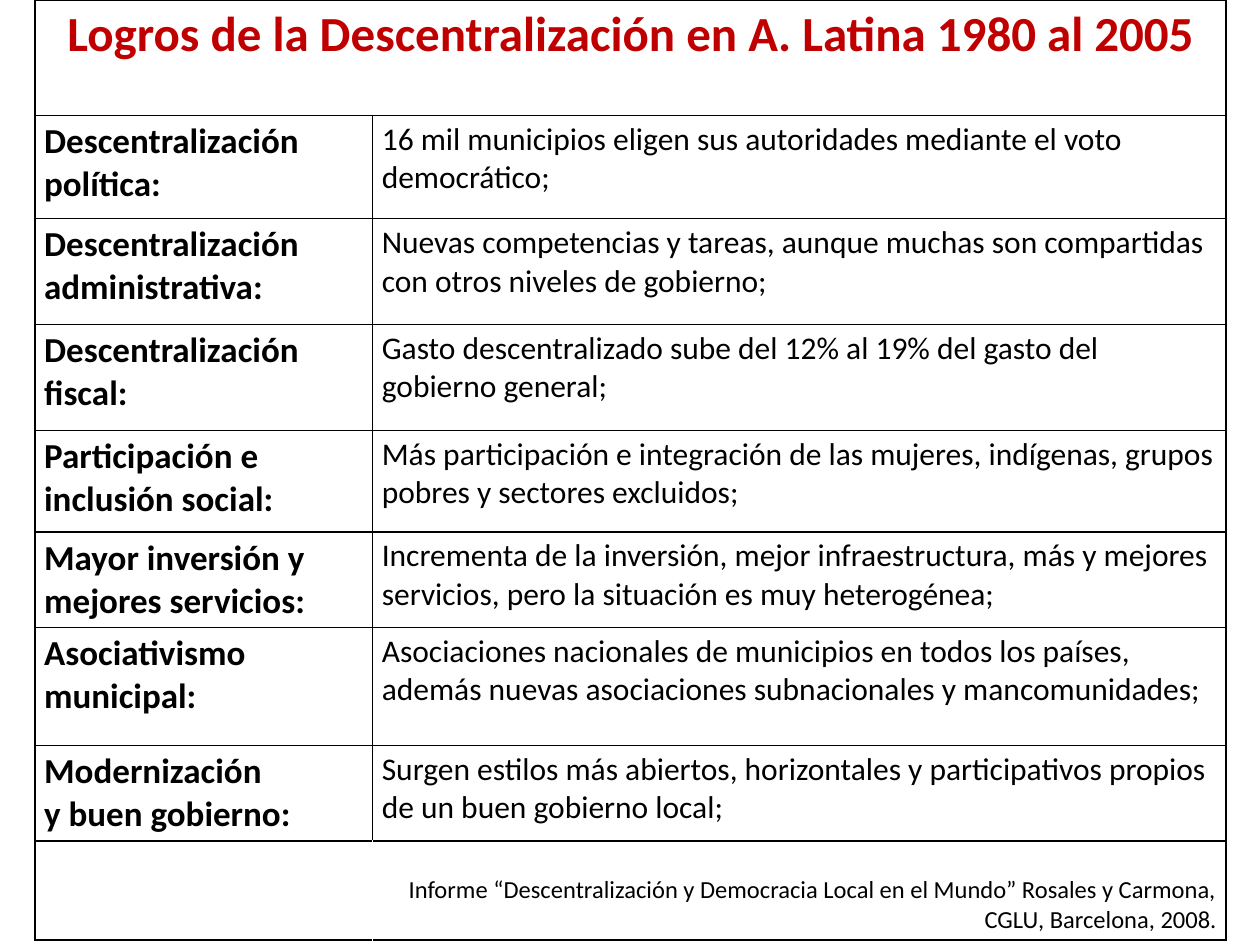
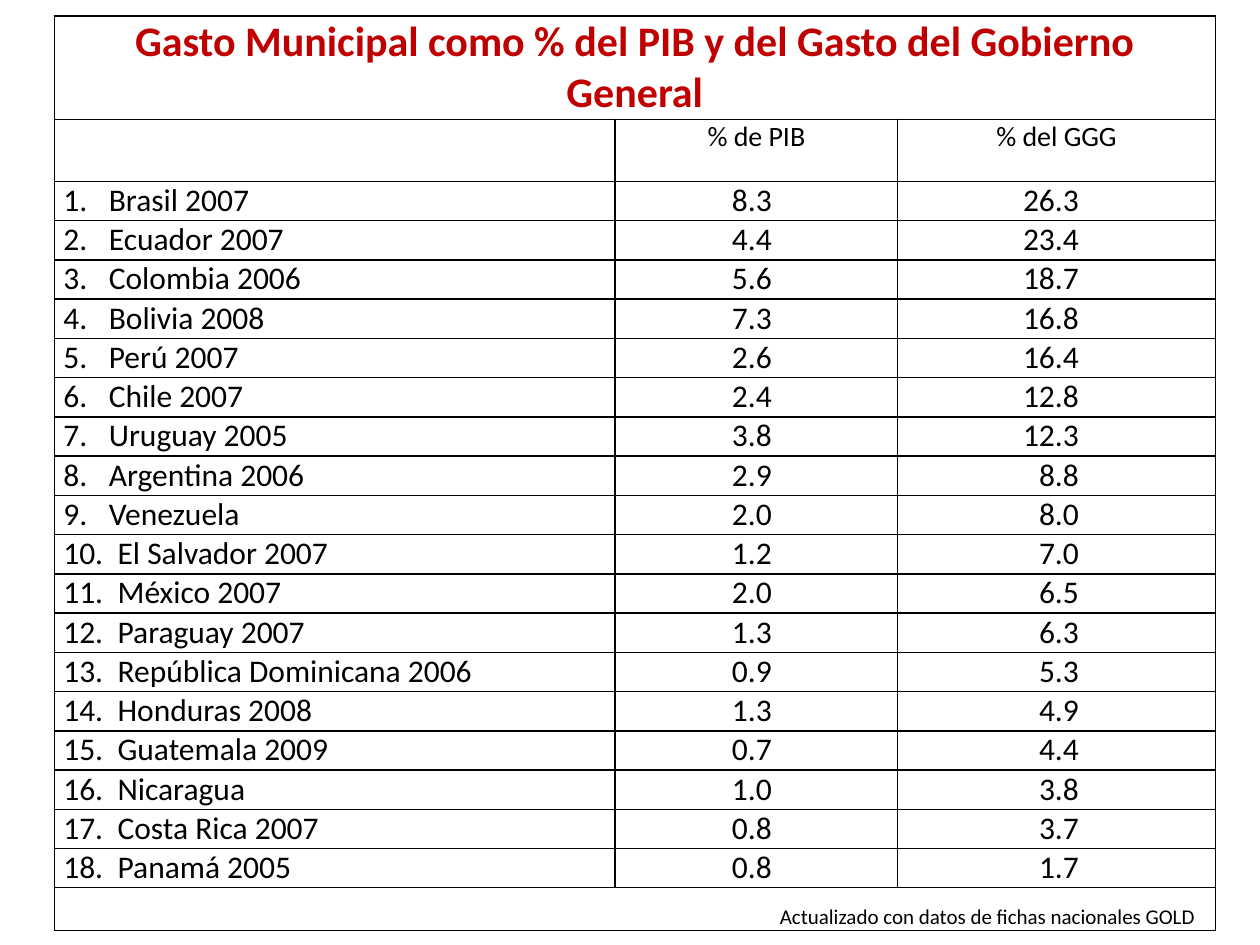
from dataclasses import dataclass

from lxml.etree import SubElement
from pptx import Presentation
from pptx.dml.color import RGBColor
from pptx.enum.text import MSO_ANCHOR, PP_ALIGN
from pptx.oxml.ns import qn
from pptx.util import Pt


@dataclass(frozen=True)
class Theme:
    font: str = "Calibri"
    title_color: str = "C00000"
    text_color: str = "000000"
    border_color: str = "000000"
    border_width: float = 1
    side_margin: float = 5.2
    achievements_title: float = 28
    spending_title: float = 24
    label: float = 20
    body: float = 18
    header: float = 16
    source: float = 14
    note: float = 12


THEME = Theme()
BLANK_LAYOUT = 6

ACHIEVEMENTS = [
    ("Descentralización política:",
     "16 mil municipios eligen sus autoridades mediante el voto democrático;"),
    ("Descentralización administrativa:",
     "Nuevas competencias y tareas, aunque muchas son compartidas con otros niveles de gobierno;"),
    ("Descentralización fiscal:",
     "Gasto descentralizado sube del 12% al 19% del gasto del gobierno general;"),
    ("Participación e inclusión social:",
     "Más participación e integración de las mujeres, indígenas, grupos pobres y sectores excluidos;"),
    ("Mayor inversión y mejores servicios:",
     "Incrementa de la inversión, mejor infraestructura, más y mejores servicios, "
     "pero la situación es muy heterogénea;"),
    ("Asociativismo municipal:",
     "Asociaciones nacionales de municipios en todos los países, además nuevas "
     "asociaciones subnacionales y mancomunidades;"),
    ("Modernización\ny buen gobierno:",
     "Surgen estilos más abiertos, horizontales y participativos propios de un buen gobierno local;"),
]

SPENDING = [
    ("Brasil 2007", "8.3", "26.3"),
    ("Ecuador 2007", "4.4", "23.4"),
    ("Colombia 2006", "5.6", "18.7"),
    ("Bolivia 2008", "7.3", "16.8"),
    ("Perú 2007", "2.6", "16.4"),
    ("Chile 2007", "2.4", "12.8"),
    ("Uruguay 2005", "3.8", "12.3"),
    ("Argentina 2006", "2.9", "8.8"),
    ("Venezuela", "2.0", "8.0"),
    ("El Salvador 2007", "1.2", "7.0"),
    ("México 2007", "2.0", "6.5"),
    ("Paraguay 2007", "1.3", "6.3"),
    ("República Dominicana 2006", "0.9", "5.3"),
    ("Honduras 2008", "1.3", "4.9"),
    ("Guatemala 2009", "0.7", "4.4"),
    ("Nicaragua", "1.0", "3.8"),
    ("Costa Rica 2007", "0.8", "3.7"),
    ("Panamá 2005", "0.8", "1.7"),
]


def write(cell, text, size=THEME.body, bold=False, color=THEME.text_color,
          align=PP_ALIGN.LEFT, anchor=MSO_ANCHOR.TOP, right_margin=None):
    cell.text = text
    cell.vertical_anchor = anchor
    if right_margin is not None:
        cell.margin_right = Pt(right_margin)
    for paragraph in cell.text_frame.paragraphs:
        paragraph.alignment = align
        font = paragraph.font
        font.name, font.size, font.bold = THEME.font, Pt(size), bold
        font.color.rgb = RGBColor.from_string(color)
        for run in paragraph.runs:
            run.font.name, run.font.size, run.font.bold = THEME.font, Pt(size), bold
            run.font.color.rgb = RGBColor.from_string(color)


def write_title(table, text, size):
    table.cell(0, 0).merge(table.cell(0, len(table.columns) - 1))
    write(table.cell(0, 0), text, size=size, bold=True,
          color=THEME.title_color, align=PP_ALIGN.CENTER)


def number_paragraph(paragraph, number):
    """Give the paragraph an automatic number with a hanging indent."""
    indent = Pt(26 if number < 10 else 31)
    properties = paragraph._p.get_or_add_pPr()
    properties.set("marL", str(indent))
    properties.set("indent", str(-indent))
    bullet = SubElement(properties, qn("a:buAutoNum"), type="arabicPeriod", startAt=str(number))
    properties.insert(0, bullet)


def set_borders(cell, edges):
    properties = cell._tc.get_or_add_tcPr()
    for edge in edges:
        line = SubElement(properties, qn(f"a:ln{edge}"), w=str(Pt(THEME.border_width)))
        fill = SubElement(line, qn("a:solidFill"))
        SubElement(fill, qn("a:srgbClr"), val=THEME.border_color)


def add_ruled_table(slide, left, top, widths, heights, vertical_margin, open_row=None):
    """Add an unfilled table; open_row has no line between its two cells."""
    frame = slide.shapes.add_table(len(heights), len(widths), Pt(left), Pt(top),
                                   Pt(sum(widths)), Pt(sum(heights)))
    table = frame.table
    table.first_row = table.horz_banding = False
    for column, width in zip(table.columns, widths):
        column.width = Pt(width)
    for row_index, (row, height) in enumerate(zip(table.rows, heights)):
        row.height = Pt(height)
        for column_index, cell in enumerate(row.cells):
            edges = "LRTB"
            if row_index == open_row:
                edges = "LTB" if column_index == 0 else "RTB"
            set_borders(cell, edges)
            cell.fill.background()
            cell.margin_left = cell.margin_right = Pt(THEME.side_margin)
            cell.margin_top = cell.margin_bottom = Pt(vertical_margin)
    return table


def build_achievements(slide, left, top):
    heights = [66, 59, 60.5, 60.5, 58, 54.5, 67.5, 54.5, 56.5]
    source_row = len(heights) - 1
    table = add_ruled_table(slide, left, top, [193, 487.5], heights,
                            vertical_margin=2.8, open_row=source_row)
    write_title(table, "Logros de la Descentralización en A. Latina 1980 al 2005",
                THEME.achievements_title)
    for row, (label, achievement) in enumerate(ACHIEVEMENTS, start=1):
        write(table.cell(row, 0), label, size=THEME.label, bold=True)
        write(table.cell(row, 1), achievement)
    write(table.cell(source_row, 1),
          "Informe “Descentralización y Democracia Local en el Mundo” "
          "Rosales y Carmona, CGLU, Barcelona, 2008.",
          size=THEME.source, align=PP_ALIGN.RIGHT, anchor=MSO_ANCHOR.BOTTOM)


def build_spending(slide, left, top):
    heights = [59, 35.5] + [22.45] * len(SPENDING) + [24.5]
    note_row = len(heights) - 1
    table = add_ruled_table(slide, left, top, [320.5, 161.5, 181.5], heights, vertical_margin=0)
    write_title(table, "Gasto Municipal como % del PIB y del Gasto del Gobierno General",
                THEME.spending_title)
    for column, header in enumerate(("% de PIB", "% del GGG"), start=1):
        write(table.cell(1, column), header, size=THEME.header, align=PP_ALIGN.CENTER)
    for number, (country, gdp_share, government_share) in enumerate(SPENDING, start=1):
        row = number + 1
        write(table.cell(row, 0), country)
        number_paragraph(table.cell(row, 0).text_frame.paragraphs[0], number)
        write(table.cell(row, 1), gdp_share, align=PP_ALIGN.RIGHT, right_margin=72)
        write(table.cell(row, 2), government_share, align=PP_ALIGN.RIGHT, right_margin=78)
    table.cell(note_row, 0).merge(table.cell(note_row, 2))
    write(table.cell(note_row, 0), "Actualizado con datos de fichas nacionales GOLD",
          size=THEME.note, align=PP_ALIGN.RIGHT, anchor=MSO_ANCHOR.BOTTOM, right_margin=11.5)


def main():
    presentation = Presentation()
    presentation.slide_width, presentation.slide_height = Pt(720), Pt(540)
    for build, left, top in ((build_achievements, 20, 0), (build_spending, 31, 9.2)):
        slide = presentation.slides.add_slide(presentation.slide_layouts[BLANK_LAYOUT])
        build(slide, left, top)
    presentation.save("out.pptx")


if __name__ == "__main__":
    main()
